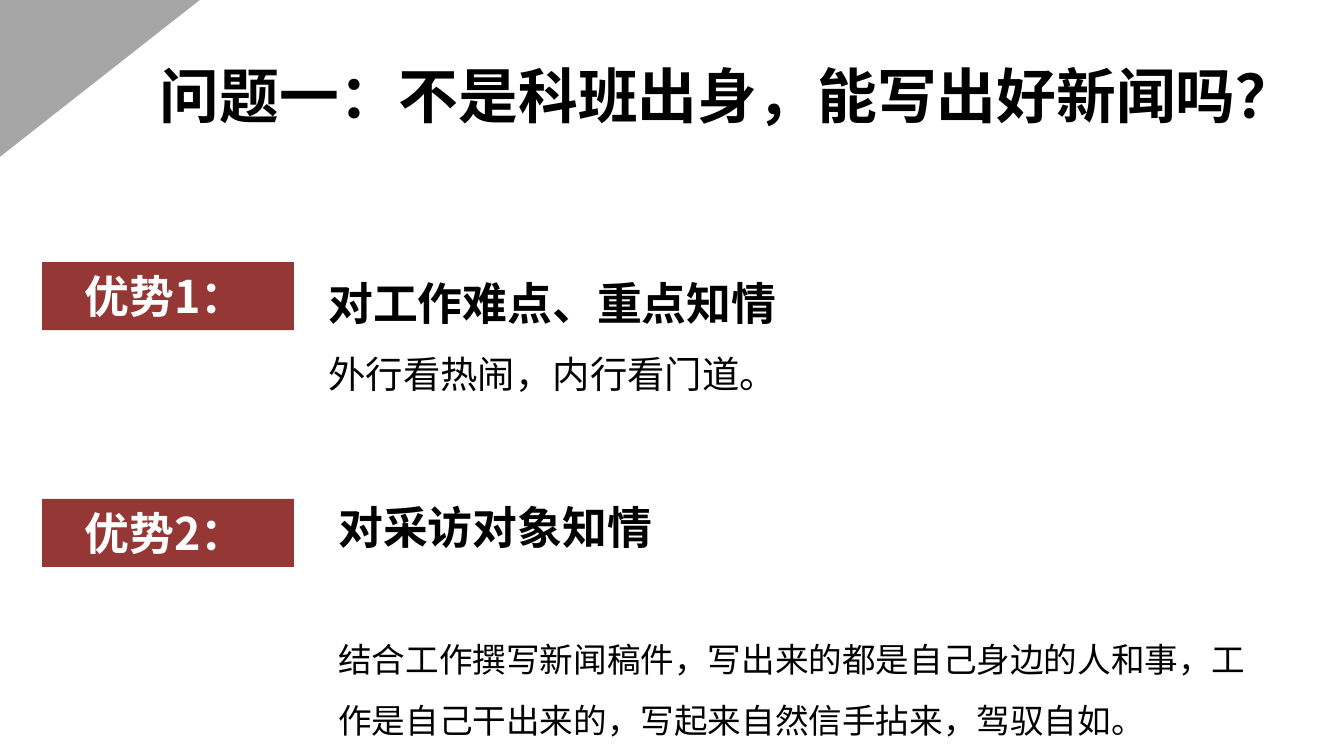
from dataclasses import dataclass

from lxml import etree
from pptx import Presentation
from pptx.dml.color import RGBColor
from pptx.enum import shapes, text
from pptx.oxml.ns import qn
from pptx.util import Pt


@dataclass(frozen=True)
class Theme:
    font: str = "Noto Sans CJK SC"
    ink: str = "000000"
    paper: str = "FFFFFF"
    accent: str = "953735"
    corner: str = "A6A6A6"
    title: int = 32
    heading: int = 24
    body: int = 20
    small: int = 18


THEME = Theme()


def format_paragraph(p, size, color=THEME.ink, bold=False):
    p.alignment = text.PP_ALIGN.LEFT
    for r in p.runs:
        r.font.size = Pt(size)
        r.font.bold = bold
        r.font.color.rgb = RGBColor.from_string(color)
        r.font.name = THEME.font
        ea = etree.Element(qn("a:ea"), typeface=THEME.font)
        r.font._element.find(qn("a:latin")).addnext(ea)


def prepare_frame(tf):
    tf.word_wrap = True
    tf.auto_size = text.MSO_AUTO_SIZE.NONE
    tf.vertical_anchor = text.MSO_ANCHOR.TOP


def set_title(slide, words, left, top, width, height):
    sp = slide.shapes.title
    sp.left, sp.top, sp.width, sp.height = map(Pt, (left, top, width, height))
    tf = sp.text_frame
    prepare_frame(tf)
    tf.text = words
    format_paragraph(tf.paragraphs[0], THEME.title, bold=True)


def add_filled(slide, kind, left, top, width, height, color):
    sp = slide.shapes.add_shape(kind, Pt(left), Pt(top), Pt(width), Pt(height))
    sp.shadow.inherit = False
    sp.fill.solid()
    sp.fill.fore_color.rgb = RGBColor.from_string(color)
    sp.line.fill.background()
    return sp


def add_corner(slide):
    sp = add_filled(slide, shapes.MSO_SHAPE.ISOSCELES_TRIANGLE,
                    11.5, -11.5, 84, 107, THEME.corner)
    sp.adjustments[0] = 0
    sp.rotation = 90


def add_label(slide, words, top):
    sp = add_filled(slide, shapes.MSO_SHAPE.RECTANGLE,
                    22.5, top, 135, 36.4, THEME.accent)
    tf = sp.text_frame
    prepare_frame(tf)
    tf.margin_left = Pt(23)
    tf.text = words
    format_paragraph(tf.paragraphs[0], THEME.heading, THEME.paper, True)


def add_point(slide, heading, body, size, gap, left, top, width, height):
    sp = slide.shapes.add_textbox(Pt(left), Pt(top), Pt(width), Pt(height))
    tf = sp.text_frame
    prepare_frame(tf)
    tf.text = heading
    format_paragraph(tf.paragraphs[0], THEME.heading, bold=True)
    p = tf.add_paragraph()
    p.text = body
    p.line_spacing = 1.5
    p.space_before = Pt(gap)
    format_paragraph(p, size)


def main():
    prs = Presentation()
    prs.slide_width, prs.slide_height = Pt(720), Pt(405)
    slide = prs.slides.add_slide(prs.slide_layouts[5])
    add_corner(slide)
    set_title(slide, "问题一：不是科班出身，能写出好新闻吗？", 78.5, 28, 608, 46)
    add_label(slide, "优势1：", 140.5)
    add_label(slide, "优势2：", 267.3)
    add_point(slide, "对工作难点、重点知情", "外行看热闹，内行看门道。",
              THEME.body, 0, 168.8, 144, 456, 73)
    add_point(slide, "对采访对象知情",
              "结合工作撰写新闻稿件，写出来的都是自己身边的人和事，"
              "工作是自己干出来的，写起来自然信手拈来，驾驭自如。",
              THEME.small, 35, 174.2, 264.4, 518, 131)
    prs.save("out.pptx")


if __name__ == "__main__":
    main()
